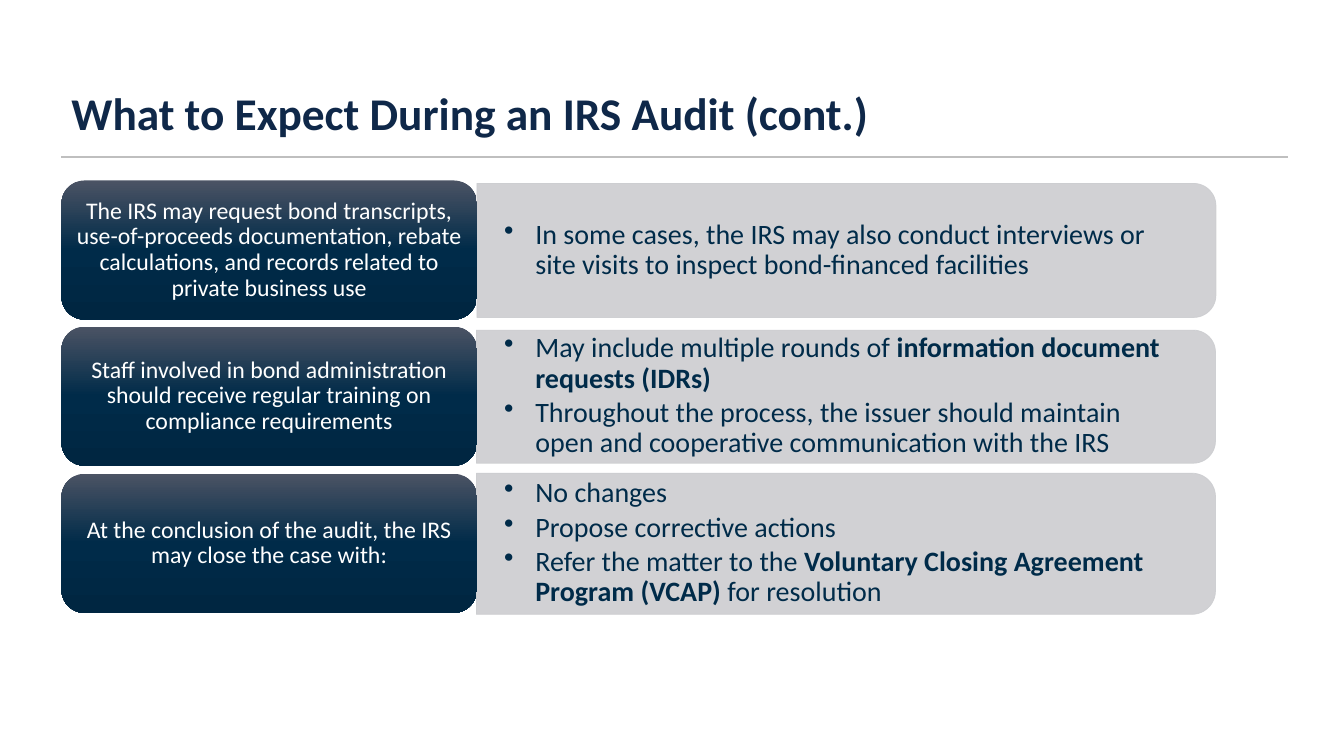
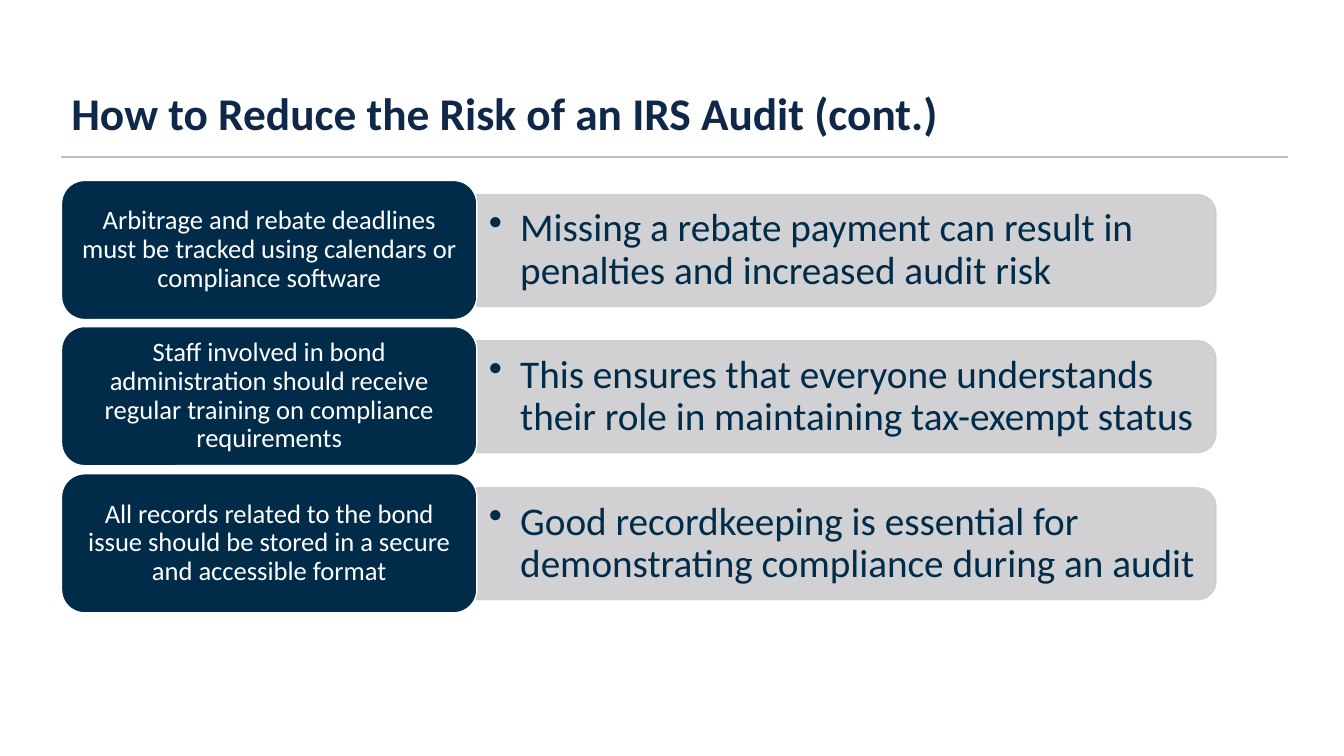
from lxml import etree
from pptx import Presentation
from pptx import util as u
from pptx.dml.color import RGBColor
from pptx.enum import shapes, text
from pptx.oxml import ns

PX = 9144
FONT = "Calibri"
COLORS = {
    "title": "0F2849",
    "rule": "BFBFBF",
    "navy": "002B49",
    "slate": "4B5364",
    "deep": "002641",
    "panel": "CCCDD0",
    "white": "FFFFFF",
}
LABEL_GRADIENT = ((0, "slate"), (50, "navy"), (100, "deep"))
LEFT, FIRST_TOP = 61, 179
LABEL_WIDTH, LABEL_HEIGHT = 412, 138
PANEL_LEFT, PANEL_WIDTH = LEFT + LABEL_WIDTH, 733
PANEL_INSET = 7

AUDIT_STEPS = [
    ("The IRS may request bond transcripts, use-of-proceeds documentation, "
     "rebate calculations, and records related to private business use",
     133,
     ["In some cases, the IRS may also conduct interviews or site visits to "
      "inspect bond-financed facilities"]),
    ("Staff involved in bond administration should receive regular training on "
     "compliance requirements",
     132,
     ["May include multiple rounds of **information document requests (IDRs)**",
      "Throughout the process, the issuer should maintain open and cooperative "
      "communication with the IRS"]),
    ("At the conclusion of the audit, the IRS may close the case with:",
     140,
     ["No changes",
      "Propose corrective actions",
      "Refer the matter to the **Voluntary Closing Agreement Program (VCAP) **"
      "for resolution"]),
]
RISK_MEASURES = [
    ("Arbitrage and rebate deadlines must be tracked using calendars or "
     "compliance software",
     111,
     ["Missing a rebate payment can result in penalties and increased audit risk"]),
    ("Staff involved in bond administration should receive regular training on "
     "compliance requirements",
     111,
     ["This ensures that everyone understands their role in maintaining "
      "tax-exempt status"]),
    ("All records related to the bond issue should be stored in a secure and "
     "accessible format",
     111,
     ["Good recordkeeping is essential for demonstrating compliance during an audit"]),
]
AUDIT_STYLE = {"label_size": 17, "detail_size": 20, "margins": (27, 14),
               "panel_line": 0.5, "gradient": True}
RISK_STYLE = {"label_size": 19, "detail_size": 28, "margins": (12, 6),
              "panel_line": 1, "gradient": False}


def px(*lengths):
    return [u.Emu(length * PX) for length in lengths]


def rgb(name):
    return RGBColor.from_string(COLORS[name])


def set_font(paragraph, size, color, bold=False):
    paragraph.line_spacing = 0.9
    font = paragraph.font
    font.name, font.size, font.bold = FONT, u.Pt(size), bold
    font.color.rgb = rgb(color)


def set_frame(frame, margin_x, margin_y):
    frame.word_wrap = True
    frame.vertical_anchor = text.MSO_ANCHOR.MIDDLE
    frame.margin_left = frame.margin_right = u.Emu(margin_x * PX)
    frame.margin_top = frame.margin_bottom = u.Emu(margin_y * PX)


def add_title(slide, wording):
    frame = slide.shapes.add_textbox(*px(LEFT, 90, 1011, 50)).text_frame
    set_frame(frame, 10, 5)
    heading = frame.paragraphs[0]
    heading.text = wording
    set_font(heading, 32.4, "title", True)
    rule = slide.shapes.add_connector(
        shapes.MSO_CONNECTOR.STRAIGHT, *px(LEFT, 156, 1277, 156))
    rule.line.color.rgb = rgb("rule")
    rule.line.width = u.Pt(1.75)
    etree.SubElement(rule._element.spPr, ns.qn("a:effectLst"))


def add_panel(slide, middle, height, line_width):
    left = PANEL_LEFT + (PANEL_WIDTH - height) // 2
    panel = slide.shapes.add_shape(
        shapes.MSO_SHAPE.ROUND_2_SAME_RECTANGLE,
        *px(left, middle - PANEL_WIDTH // 2, height, PANEL_WIDTH))
    panel.rotation = 90
    panel.shadow.inherit = False
    panel.fill.solid()
    panel.fill.fore_color.rgb = rgb("panel")
    panel.line.color.rgb = rgb("panel")
    panel.line.width = u.Pt(line_width)
    for color in panel._element.spPr.iter(ns.qn("a:srgbClr")):
        etree.SubElement(color, ns.qn("a:alpha"), val="90000")


def add_bullet(paragraph, wording, size):
    properties = paragraph._p.get_or_add_pPr()
    properties.set("marL", str(31 * PX))
    properties.set("indent", str(-31 * PX))
    etree.SubElement(properties, ns.qn("a:buChar"), char="•")
    paragraph.space_after = u.Pt(size * 0.15)
    set_font(paragraph, size, "navy")
    for index, part in enumerate(wording.split("**")):
        if part:
            run = paragraph.add_run()
            run.text = part
            if index % 2:
                run.font.bold = True


def add_details(slide, middle, height, bullets, size, margins):
    box_height = height - 2 * PANEL_INSET
    frame = slide.shapes.add_textbox(
        *px(PANEL_LEFT, middle - box_height // 2,
            PANEL_WIDTH - PANEL_INSET, box_height)).text_frame
    set_frame(frame, *margins)
    for index, wording in enumerate(bullets):
        paragraph = frame.add_paragraph() if index else frame.paragraphs[0]
        add_bullet(paragraph, wording, size)


def fill_gradient(label):
    label.fill.gradient()
    label.fill.gradient_angle = 270
    stops = label._element.spPr.find(".//" + ns.qn("a:gsLst"))
    for stop in list(stops):
        stops.remove(stop)
    for position, color in LABEL_GRADIENT:
        stop = etree.SubElement(stops, ns.qn("a:gs"), pos=str(position * 1000))
        etree.SubElement(stop, ns.qn("a:srgbClr"), val=COLORS[color])


def add_label(slide, top, wording, size, gradient):
    label = slide.shapes.add_shape(
        shapes.MSO_SHAPE.ROUNDED_RECTANGLE,
        *px(LEFT, top, LABEL_WIDTH, LABEL_HEIGHT))
    label.shadow.inherit = False
    if gradient:
        fill_gradient(label)
        label.line.fill.background()
    else:
        label.fill.solid()
        label.fill.fore_color.rgb = rgb("navy")
        label.line.color.rgb = rgb("white")
        label.line.width = u.Pt(1)
    set_frame(label.text_frame, 7, 4)
    caption = label.text_frame.paragraphs[0]
    caption.text = wording
    caption.alignment = text.PP_ALIGN.CENTER
    set_font(caption, size, "white")


def add_topic_slide(deck, title, rows, style):
    slide = deck.slides.add_slide(deck.slide_layouts[6])
    add_title(slide, title)
    for index, (label, height, bullets) in enumerate(rows):
        top = FIRST_TOP + index * 291 // 2
        middle = top + LABEL_HEIGHT // 2
        add_panel(slide, middle, height, style["panel_line"])
        add_details(slide, middle, height, bullets,
                    style["detail_size"], style["margins"])
        add_label(slide, top, label, style["label_size"], style["gradient"])


def main():
    deck = Presentation()
    deck.slide_width, deck.slide_height = px(1333, 750)
    add_topic_slide(deck, "What to Expect During an IRS Audit (cont.)",
                    AUDIT_STEPS, AUDIT_STYLE)
    add_topic_slide(deck, "How to Reduce the Risk of an IRS Audit (cont.)",
                    RISK_MEASURES, RISK_STYLE)
    deck.save("out.pptx")


if __name__ == "__main__":
    main()
